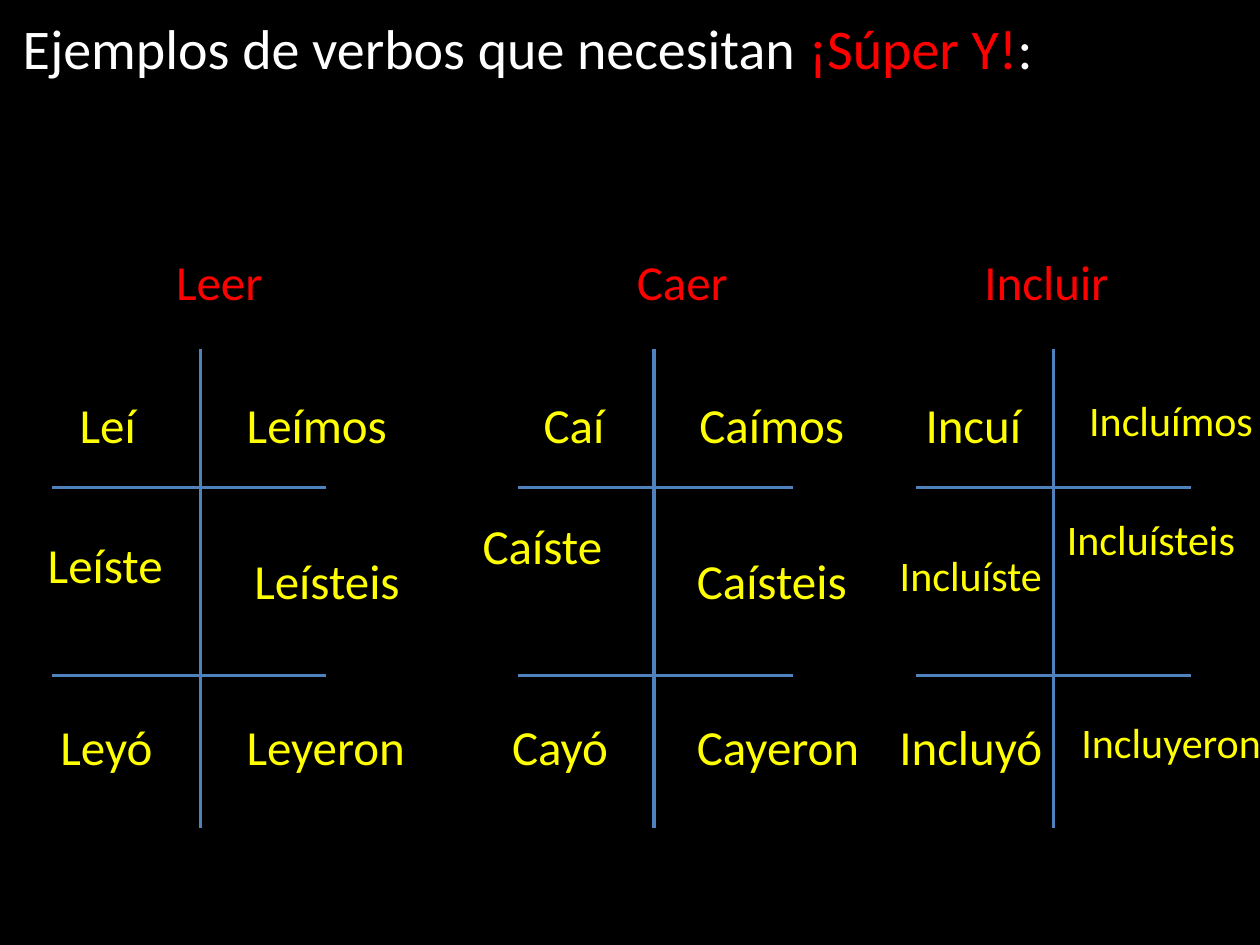
from collections import namedtuple
from lxml.etree import SubElement
from pptx import Presentation
from pptx.dml.color import RGBColor as Rgb
from pptx.enum.shapes import MSO_CONNECTOR as Link
from pptx.enum.text import MSO_ANCHOR as Anchor, MSO_AUTO_SIZE as Auto, PP_ALIGN as Align
from pptx.oxml.ns import qn
from pptx.util import Inches, Pt

Theme = namedtuple("Theme", "back plain verb form rule font title large small width")
theme = Theme(
    Rgb(0, 0, 0), Rgb(255, 255, 255), Rgb(255, 0, 0), Rgb(255, 255, 0),
    Rgb(0x4F, 0x81, 0xBD), "Calibri", Pt(32), Pt(28), Pt(24), Pt(2),
)

deck = Presentation()
deck.slide_width, deck.slide_height = Inches(10), Inches(7.5)
col, row = deck.slide_width / 10, deck.slide_height / 7.5
slide = deck.slides.add_slide(deck.slide_layouts[5])
slide.background.fill.solid()
slide.background.fill.fore_color.rgb = theme.back


def draw_rule(x1, y1, x2, y2):
    rule = slide.shapes.add_connector(
        Link.STRAIGHT, int(x1 * col), int(y1 * row), int(x2 * col), int(y2 * row))
    rule.line.color.rgb = theme.rule
    rule.line.width = theme.width
    SubElement(rule._element.spPr, qn("a:effectLst"))


def add_word(text, left, top, wide, size, color):
    high = 0.57 if size == theme.large else 0.5
    box = slide.shapes.add_textbox(
        int(left * col), int(top * row), int(wide * col), int(high * row))
    frame = box.text_frame
    frame.word_wrap = True
    frame.auto_size = Auto.SHAPE_TO_FIT_TEXT
    para = frame.paragraphs[0]
    para.text = text
    para.alignment = Align.CENTER
    para.font.name, para.font.size = theme.font, size
    para.font.color.rgb = color


title = slide.shapes.title
title.left, title.top = int(0.08 * col), int(0.06 * row)
title.width, title.height = int(9.38 * col), int(0.64 * row)
frame = title.text_frame
frame.word_wrap = True
frame.auto_size = Auto.NONE
frame.vertical_anchor = Anchor.TOP
para = frame.paragraphs[0]
para.alignment = Align.LEFT
para.font.name, para.font.size = theme.font, theme.title
for text, color in (
    ("Ejemplos de verbos que necesitan ", theme.plain),
    ("¡Súper Y!", theme.verb),
    (":", theme.plain),
):
    run = para.add_run()
    run.text = text
    run.font.color.rgb = color

big, small = theme.large, theme.small
first, last = 3.08, 5.64
verbs = (
    ("Leer", 0.41, 1.59, 2.66, (
        ("Leí", -0.18, first, big), ("Leíste", -0.2, 4.19, big), ("Leyó", -0.19, last, big),
        ("Leímos", 1.48, first, big), ("Leísteis", 1.56, 4.32, big),
        ("Leyeron", 1.55, last, big))),
    ("Incluir", 7.27, 8.36, 2.07, (
        ("Incuí", 6.69, first, big), ("Incluíste", 6.67, 4.31, small),
        ("Incluyó", 6.67, last, big), ("Incluímos", 8.26, first, small),
        ("Incluísteis", 8.1, 4.03, small), ("Incluyeron", 8.26, last, small))),
    ("Caer", 4.11, 5.19, 2.61, (
        ("Caí", 3.52, first, big), ("Caíste", 3.27, 4.04, big), ("Cayó", 3.41, last, big),
        ("Caímos", 5.09, first, big), ("Caísteis", 5.09, 4.32, big),
        ("Cayeron", 5.14, last, big))),
)

for verb, left, axis, wide, forms in verbs:
    draw_rule(axis, 2.77, axis, 6.57)
    for level in (3.87, 5.36):
        draw_rule(left + 2.18, level, left, level)
    add_word(verb, left, 1.95, wide, big, theme.verb)
    for text, start, top, size in forms:
        add_word(text, start, top, 2.07, size, theme.form)

deck.save("out.pptx")
